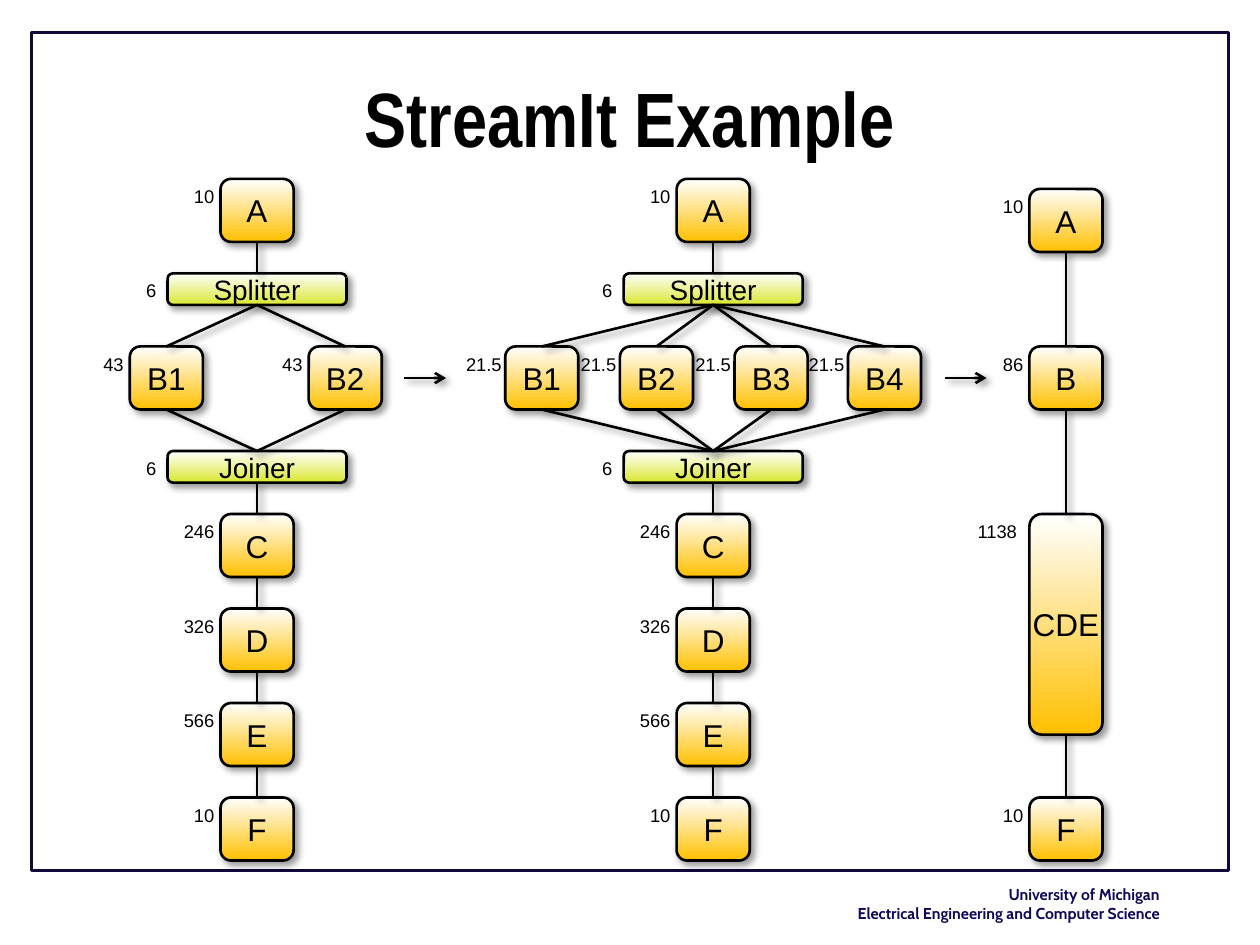
"""Build the StreamIt example slide with three stages of a stream graph."""
import pptx
import pptx.dml.color
import pptx.enum.shapes
import pptx.enum.text
import pptx.oxml
import pptx.oxml.ns
import pptx.util

Inches = pptx.util.Inches
Pt = pptx.util.Pt
RGB = pptx.dml.color.RGBColor.from_string
ALIGN = pptx.enum.text.PP_ALIGN
ANCHOR = pptx.enum.text.MSO_ANCHOR
SHAPE = pptx.enum.shapes.MSO_SHAPE
NS = pptx.oxml.ns.nsdecls("a")

COLORS = {"ink": "000000", "frame": "10093A", "footer": "0F0958",
          "white": "FFFFFF", "filter": "FFC000", "router": "DAE731"}
FONTS = {
    "title": {"name": "Arial Narrow", "size": Pt(44), "bold": True},
    "footer": {"name": "Cabin", "size": Pt(9), "bold": True},
    "filter": {"name": "Arial", "size": Pt(18), "bold": False},
    "router": {"name": "Arial", "size": Pt(16), "bold": False},
    "cost": {"name": "Arial", "size": Pt(10.5), "bold": False},
}
BLOCK_FRAME = {"margin_left": 0, "margin_right": 0, "margin_top": 0, "margin_bottom": 0,
               "word_wrap": False, "vertical_anchor": ANCHOR.MIDDLE}
BOX_W, BOX_H, ROUTER_W, ROUTER_H = 0.58, 0.5, 1.42, 0.25
TOP_Y, SPLIT_Y, B_Y, JOIN_Y, C_Y, STEP = 1.42, 2.17, 2.75, 3.58, 4.08, 0.75
COST_W = {1: 0.42, 2: 0.42, 3: 0.5, 4: 0.5}


def write(sp, text, font, frame, align=ALIGN.CENTER, color="ink"):
    tf = sp.text_frame
    tf.text = text
    for name, value in frame.items():
        setattr(tf, name, value)
    for p in tf.paragraphs:
        p.alignment = align
        for name, value in FONTS[font].items():
            setattr(p.font, name, value)
        p.font.color.rgb = RGB(COLORS[color])


def outline(sp):
    sp.line.color.rgb = RGB(COLORS["ink"])
    sp.line.width = Pt(1.5)
    sp._element.spPr.append(pptx.oxml.parse_xml(
        f'<a:effectLst {NS}><a:outerShdw blurRad="50800" dist="38100" dir="2700000" '
        f'algn="tl" rotWithShape="0"><a:srgbClr val="{COLORS["ink"]}">'
        '<a:alpha val="40000"/></a:srgbClr></a:outerShdw></a:effectLst>'))


prs = pptx.Presentation()
prs.slide_width, prs.slide_height = Inches(10), Inches(7.5)
s = prs.slides.add_slide(prs.slide_layouts[5])

title = s.shapes.title
title.left, title.top, title.width, title.height = map(Inches, (0.5, 0.3, 9, 1.25))
write(title, "StreamIt Example", "title", {"vertical_anchor": ANCHOR.MIDDLE})

border = s.shapes.add_shape(SHAPE.RECTANGLE, *map(Inches, (0.25, 0.26, 9.5, 6.65)))
border.shadow.inherit = False
border.fill.background()
border.line.color.rgb = RGB(COLORS["frame"])
border.line.width = Pt(1.5)

footer = s.shapes.add_textbox(*map(Inches, (6.25, 6.97, 3.05, 0.4)))
write(footer, "University of Michigan\nElectrical Engineering and Computer Science",
      "footer", {"word_wrap": True}, ALIGN.RIGHT, "footer")

blocks, links = [], []
tail = [("C", "246"), ("D", "326"), ("E", "566"), ("F", "10")]
for cx, b_xs, b_cost in ((2.04, (1.32, 2.74), "43"),
                         (5.66, (4.3, 5.21, 6.12, 7.02), "21.5")):
    blocks += [("A", "10", cx, TOP_Y, BOX_H, "filter"),
               ("Splitter", "6", cx, SPLIT_Y, ROUTER_H, "router"),
               ("Joiner", "6", cx, JOIN_Y, ROUTER_H, "router")]
    links.append((cx, TOP_Y + BOX_H, cx, SPLIT_Y))
    for i, bx in enumerate(b_xs, 1):
        blocks.append((f"B{i}", b_cost, bx, B_Y, BOX_H, "filter"))
        links += [(cx, SPLIT_Y + ROUTER_H, bx, B_Y), (bx, B_Y + BOX_H, cx, JOIN_Y)]
    for i, (name, cost) in enumerate(tail):
        y = C_Y + i * STEP
        blocks.append((name, cost, cx, y, BOX_H, "filter"))
        links.append((cx, y - 0.25, cx, y))

fused_x = 8.46
fused = [("A", "10", 1.5, BOX_H), ("B", "86", B_Y, BOX_H),
         ("CDE", "1138", C_Y, 1.75), ("F", "10", C_Y + 3 * STEP, BOX_H)]
blocks += [(name, cost, fused_x, y, h, "filter") for name, cost, y, h in fused]
links += [(fused_x, a[2] + a[3], fused_x, b[2]) for a, b in zip(fused, fused[1:])]

for name, cost, cx, y, h, kind in blocks:
    w = ROUTER_W if kind == "router" else BOX_W
    left = cx - w / 2
    sp = s.shapes.add_shape(SHAPE.ROUNDED_RECTANGLE, *map(Inches, (left, y, w, h)))
    sp.fill.gradient()
    sp.fill.gradient_angle = 270
    for stop, color in zip(sp.fill.gradient_stops, ("white", kind)):
        stop.color.rgb = RGB(COLORS[color])
    outline(sp)
    write(sp, name, kind, BLOCK_FRAME)

    cost_w = 0.67 if cost == "1138" else COST_W[len(cost)]
    label = s.shapes.add_textbox(*map(Inches, (left + 0.08 - cost_w, y, cost_w, 0.28)))
    write(label, cost, "cost", {"word_wrap": True})

arrows = [(3.21, 3, 3.54, 3), (7.5, 3, 7.83, 3)]
for ends in links + arrows:
    line = s.shapes.add_connector(pptx.enum.shapes.MSO_CONNECTOR.STRAIGHT,
                                  *map(Inches, ends))
    outline(line)
    if ends in arrows:
        line.line._get_or_add_ln().append(
            pptx.oxml.parse_xml(f'<a:tailEnd {NS} type="arrow"/>'))

prs.save("out.pptx")
